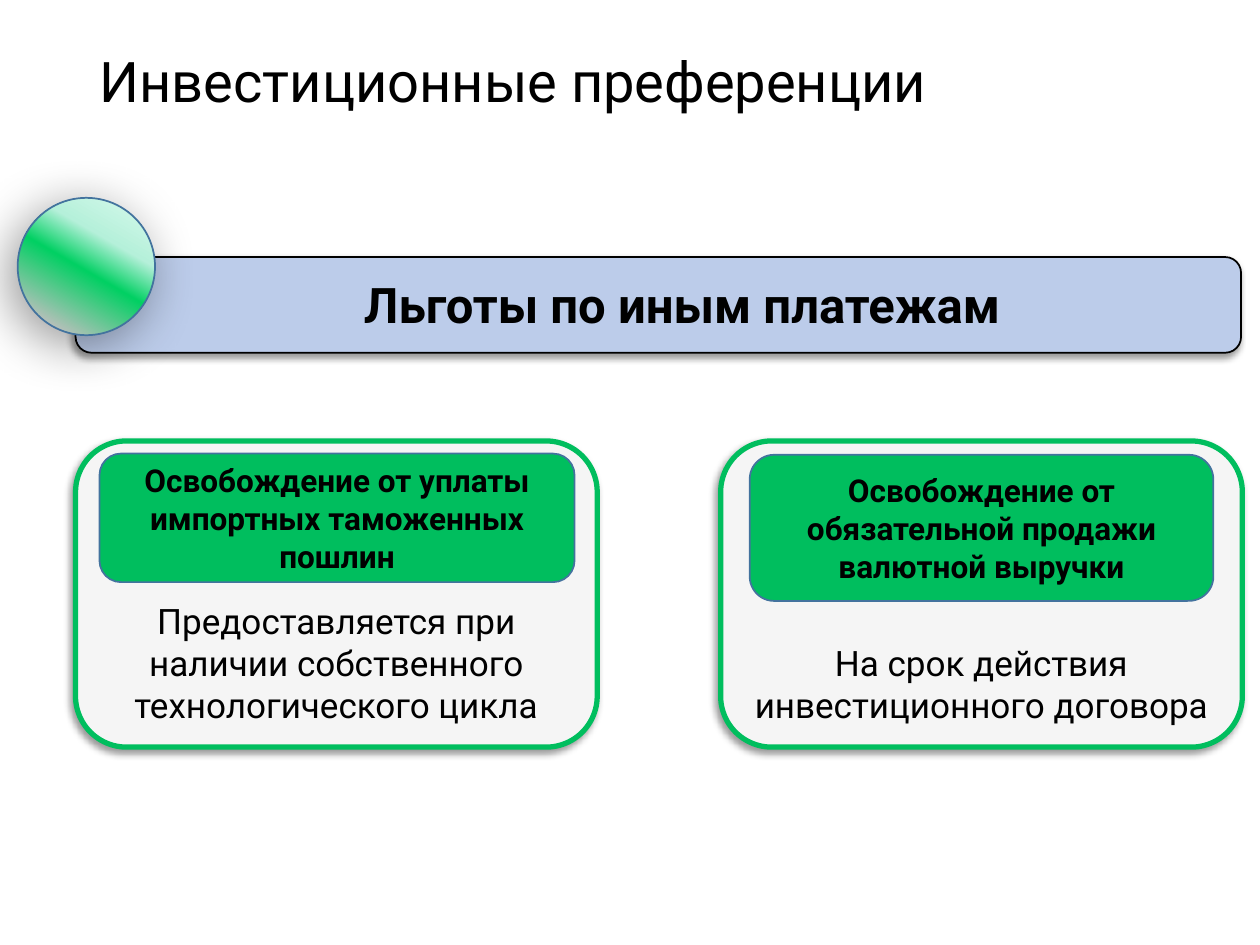
from lxml import etree
from pptx import Presentation
from pptx.dml.color import RGBColor
from pptx.enum.shapes import MSO_SHAPE
from pptx.enum.text import MSO_ANCHOR, MSO_AUTO_SIZE, PP_ALIGN
from pptx.oxml import parse_xml
from pptx.oxml.ns import nsdecls, qn
from pptx.util import Inches, Pt

ROUNDED = MSO_SHAPE.ROUNDED_RECTANGLE
OVAL = MSO_SHAPE.OVAL
LEFT, CENTER = PP_ALIGN.LEFT, PP_ALIGN.CENTER
MIDDLE, BOTTOM = MSO_ANCHOR.MIDDLE, MSO_ANCHOR.BOTTOM

FONT = "Roboto"
BLACK, GREEN, BLUE, GRAY, OUTLINE = "000000", "00BE5E", "BCCCEA", "F5F5F5", "43739E"
BALL_STOPS = [(12, "BFBFBF"), (48, "01D063"), (68, "B5F0DA"), (100, "DAFAED")]

CARD_TOP, CARD_WIDTH, CARD_HEIGHT = 3.5, 4.14, 2.43
# Card left, header box, header text, body paragraphs
CARDS = [
    (0.6, (0.79, 3.6, 3.77, 1.02),
     "Освобождение от уплаты импортных таможенных пошлин",
     ["Предоставляется при наличии собственного технологического цикла"]),
    (5.72, (5.95, 3.61, 3.68, 1.16),
     "Освобождение от обязательной продажи валютной выручки",
     ["На срок действия", "инвестиционного договора"]),
]


def color(hex_value):
    return RGBColor.from_string(hex_value)


def write_text(frame, lines, size, bold=False, align=CENTER, anchor=MIDDLE):
    frame.vertical_anchor = anchor
    for index, line in enumerate(lines):
        paragraph = frame.add_paragraph() if index else frame.paragraphs[0]
        paragraph.text = line
        paragraph.alignment = align
        paragraph.font.name = FONT
        paragraph.font.size = Pt(size)
        paragraph.font.bold = bold
        paragraph.font.color.rgb = color(BLACK)


def add_shadow(shape, blur, distance):
    effects = shape._element.spPr.find(qn("a:effectLst"))
    shadow = etree.SubElement(
        effects, qn("a:outerShdw"), blurRad=str(Pt(blur)), dist=str(Pt(distance)),
        dir=str(135 * 60000), algn="tr", rotWithShape="0")
    shade = etree.SubElement(shadow, qn("a:srgbClr"), val=BLACK)
    etree.SubElement(shade, qn("a:alpha"), val="40000")


def add_panel(slide, kind, box, fill, line, line_width=1):
    shape = slide.shapes.add_shape(kind, *map(Inches, box))
    shape.shadow.inherit = False
    shape.fill.solid()
    shape.fill.fore_color.rgb = color(fill)
    shape.line.color.rgb = color(line)
    shape.line.width = Pt(line_width)
    return shape


def set_gradient(shape, stops, angle):
    stop_xml = "".join(
        f'<a:gs pos="{position * 1000}"><a:srgbClr val="{value}"/></a:gs>'
        for position, value in stops)
    gradient = parse_xml(
        f'<a:gradFill {nsdecls("a")} rotWithShape="1"><a:gsLst>{stop_xml}</a:gsLst>'
        f'<a:lin ang="{angle * 60000}" scaled="0"/></a:gradFill>')
    properties = shape._element.spPr
    properties.replace(properties.find(qn("a:solidFill")), gradient)


def add_title(slide, text):
    title = slide.shapes.title
    title.left, title.top, title.width, title.height = map(Inches, (0.69, 0, 8.62, 1.34))
    title.text_frame.auto_size = MSO_AUTO_SIZE.NONE
    write_text(title.text_frame, [text], 32, align=LEFT)
    title.text_frame.paragraphs[0].line_spacing = 0.9


def add_banner(slide, text):
    bar = add_panel(slide, ROUNDED, (0.6, 2.04, 9.25, 0.76), BLUE, BLACK)
    add_shadow(bar, 4, 3)

    ball = add_panel(slide, OVAL, (0.14, 1.57, 1.09, 1.09), GREEN, OUTLINE)
    set_gradient(ball, BALL_STOPS, 300)
    add_shadow(ball, 30, 7)

    label = slide.shapes.add_textbox(*map(Inches, (2.79, 2.13, 5.32, 0.57)))
    label.text_frame.word_wrap = False
    label.text_frame.auto_size = MSO_AUTO_SIZE.SHAPE_TO_FIT_TEXT
    write_text(label.text_frame, [text], 28, bold=True, align=LEFT, anchor=MSO_ANCHOR.TOP)


def add_card(slide, left, header_box, header_text, body_lines):
    card = add_panel(slide, ROUNDED, (left, CARD_TOP, CARD_WIDTH, CARD_HEIGHT),
                     GRAY, GREEN, 3)
    add_shadow(card, 4, 3)
    write_text(card.text_frame, body_lines, 20, anchor=BOTTOM)

    header = add_panel(slide, ROUNDED, header_box, GREEN, OUTLINE)
    frame = header.text_frame
    frame.margin_left = frame.margin_right = frame.margin_top = frame.margin_bottom = 0
    write_text(frame, [header_text], 18, bold=True)


def main():
    presentation = Presentation()
    presentation.slide_width, presentation.slide_height = Inches(10), Inches(7.5)
    slide = presentation.slides.add_slide(presentation.slide_layouts[5])

    add_title(slide, "Инвестиционные преференции")
    add_banner(slide, "Льготы по иным платежам")
    for card in CARDS:
        add_card(slide, *card)

    presentation.save("out.pptx")


if __name__ == "__main__":
    main()
